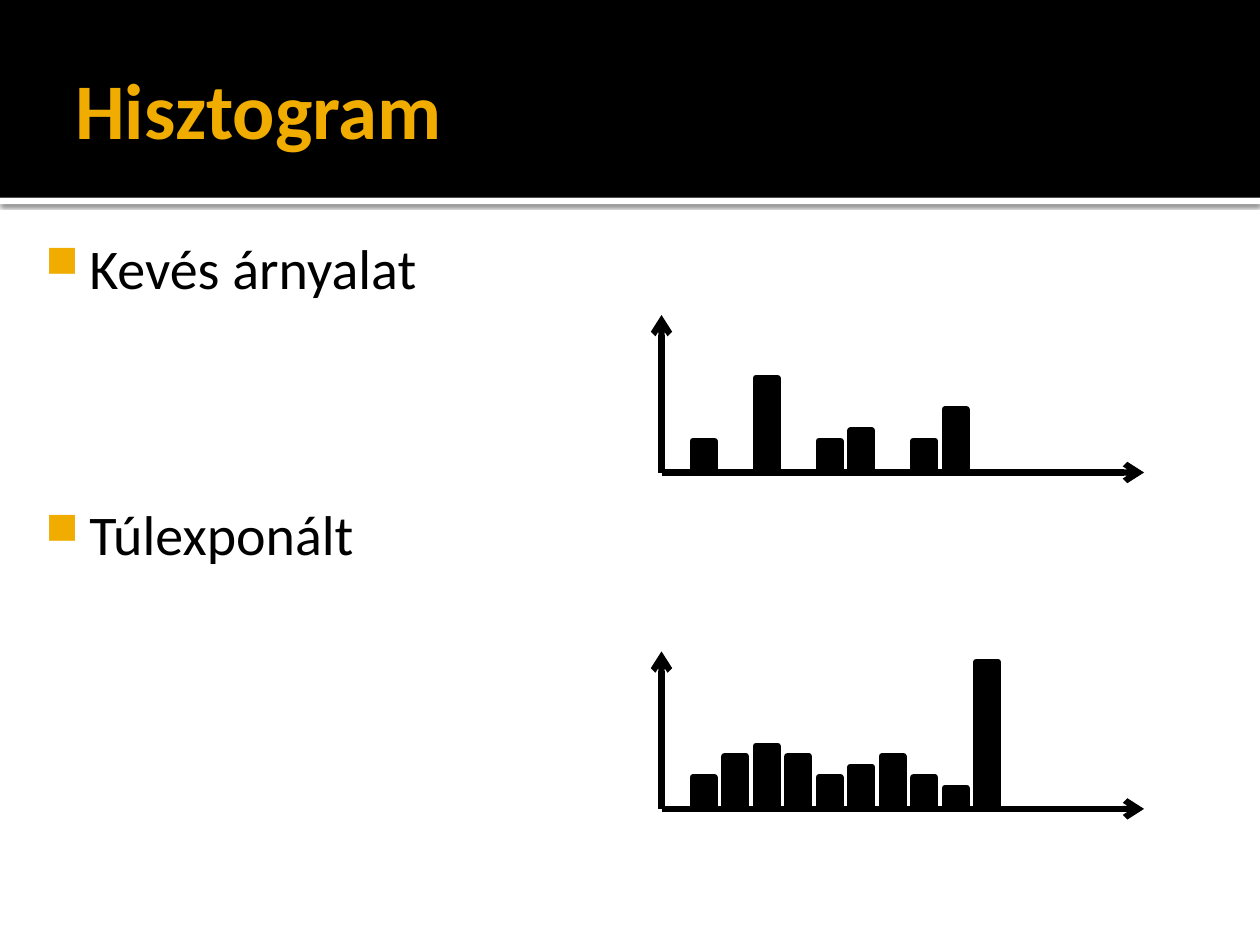
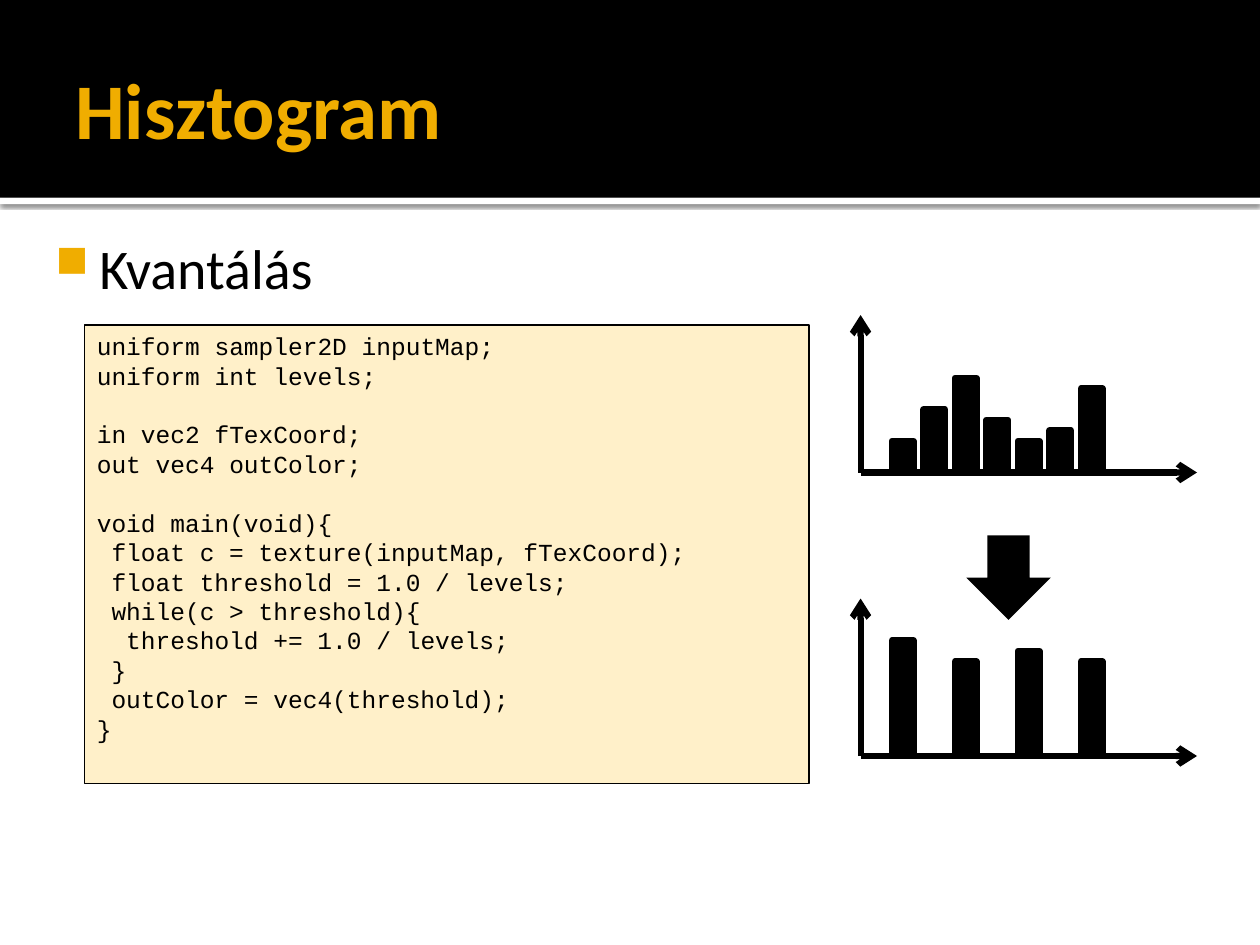
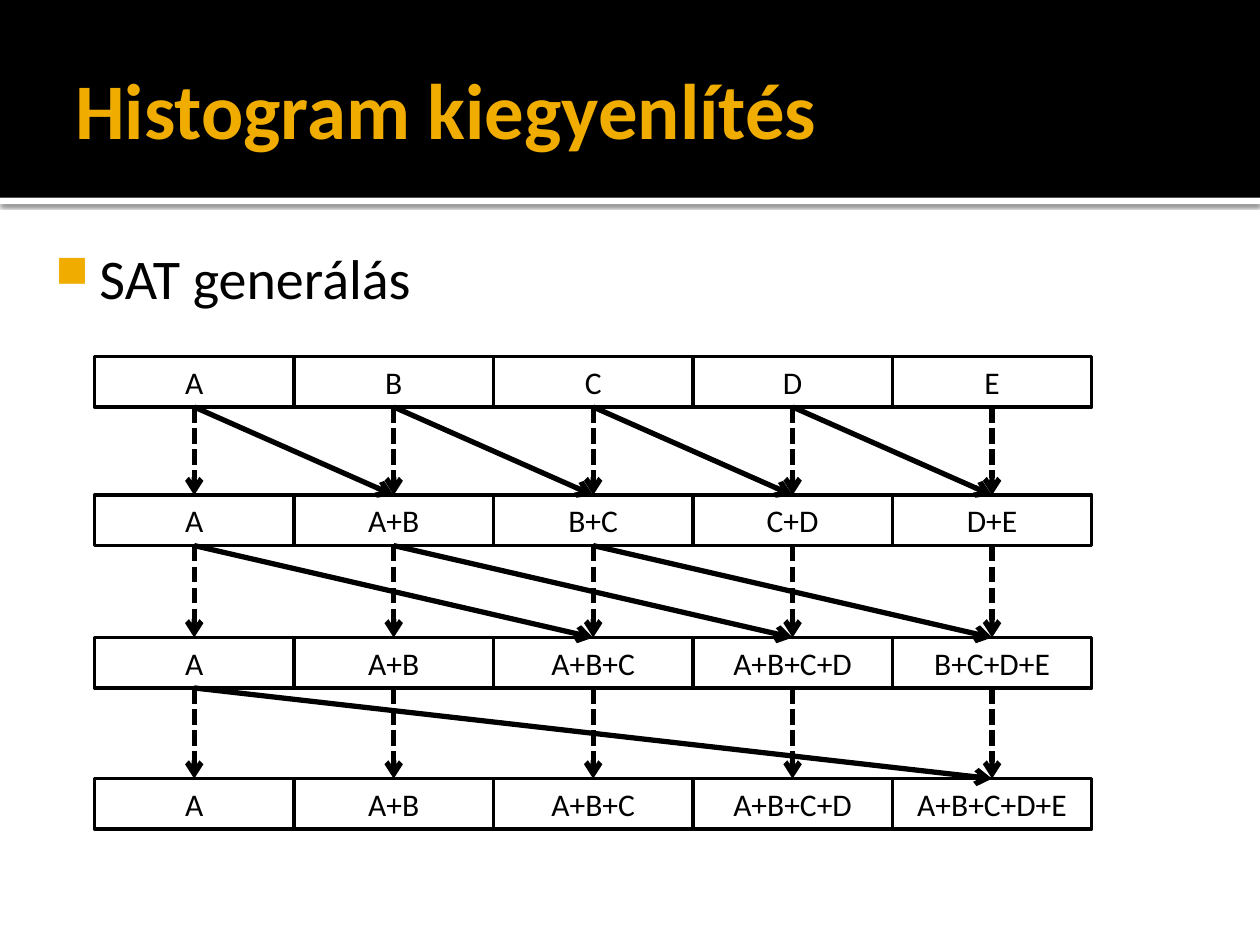
import pptx
import pptx.util
import pptx.dml.color
import pptx.enum.dml
import pptx.enum.shapes
import pptx.enum.text
import pptx.oxml
import pptx.oxml.ns

Inches, Pt = pptx.util.Inches, pptx.util.Pt
SHAPE = pptx.enum.shapes.MSO_SHAPE
ANCHOR = pptx.enum.text.MSO_ANCHOR
CENTER = pptx.enum.text.PP_ALIGN.CENTER

BLACK, WHITE, GOLD, CREAM = "000000", "FFFFFF", "F0AD00", "FFF0C9"
FONT, CODE_FONT = "Calibri", "Courier New"
WIDTH, HEIGHT, BAND_HEIGHT = 10, 7.5, 1.57
TOP, BOTTOM = 0, 2  # connection sites of a rectangle

# Bar heights in twelfths of an inch, one per slot; 0 leaves the slot empty
FEW_SHADES = [3, 0, 9, 0, 3, 4, 0, 3, 6]
OVEREXPOSED = [3, 5, 6, 5, 3, 4, 5, 3, 2, 14]
BEFORE_QUANTIZING = [3, 6, 9, 5, 3, 4, 8]
AFTER_QUANTIZING = [11, 0, 9, 0, 10, 0, 9]
BAR_UNIT, SLOT, BAR_WIDTH, AXIS_HEIGHT = 1 / 12, 0.25, 0.17, 1.25

# Blocks of (indent level, line)
SHADER = [
    [(0, "uniform sampler2D inputMap;"),
     (0, "uniform int levels;")],
    [(0, "in vec2 fTexCoord;"),
     (0, "out vec4 outColor;")],
    [(0, "void main(void){"),
     (1, "float c = texture(inputMap, fTexCoord);"),
     (1, "float threshold = 1.0 / levels;"),
     (1, "while(c > threshold){"),
     (2, "threshold += 1.0 / levels;"),
     (1, "}"),
     (1, "outColor = vec4(threshold);"),
     (0, "}")],
]
CODE_SIZE, CODE_LEADING = 14, 16.8

LETTERS = "ABCDE"
SUM_ROW_TOPS = [2.83, 3.93, 5.06, 6.18]
CELL_LEFT, CELL_WIDTH, CELL_HEIGHT = 0.75, 1.583, 0.4


def color(value):
    return pptx.dml.color.RGBColor.from_string(value)


def drawing_xml(markup):
    """Parse one element of the a: namespace."""
    head, mark, rest = markup.partition(" " if " " in markup else "/")
    return pptx.oxml.parse_xml(f"{head} {pptx.oxml.ns.nsdecls('a')}{mark}{rest}")


def add_box(page, left, top, width, height, kind=SHAPE.RECTANGLE,
            fill=None, line=None, weight=1):
    box = page.shapes.add_shape(kind, Inches(left), Inches(top),
                                Inches(width), Inches(height))
    box.shadow.inherit = False
    if fill:
        box.fill.solid()
        box.fill.fore_color.rgb = color(fill)
    else:
        box.fill.background()
    if line:
        box.line.color.rgb = color(line)
        box.line.width = Pt(weight)
    else:
        box.line.fill.background()
    return box


def set_frame(box, insets, anchor):
    frame = box.text_frame
    frame.word_wrap = True
    frame.vertical_anchor = anchor
    (frame.margin_left, frame.margin_top,
     frame.margin_right, frame.margin_bottom) = map(Inches, insets)
    return frame


def write(frame, text, size=18, font=FONT, ink=BLACK, bold=False, align=None,
          before=0, leading=None, indent=None, bullet=False):
    """Write one paragraph, using the empty first one if there is one."""
    para = frame.paragraphs[0]
    if para.runs:
        para = frame.add_paragraph()
    para.alignment = align or pptx.enum.text.PP_ALIGN.LEFT
    para.space_before = Pt(before)
    if leading:
        para.line_spacing = Pt(leading)
    properties = para._p.get_or_add_pPr()
    if indent:
        properties.set("marL", str(int(indent)))
    if bullet:
        properties.set("marL", str(Inches(0.48)))
        properties.set("indent", str(-Inches(0.35)))
        bullet_color = drawing_xml("<a:buClr />")
        bullet_color.append(drawing_xml(f'<a:srgbClr val="{GOLD}"/>'))
        properties.append(bullet_color)
        properties.append(drawing_xml('<a:buSzPct val="80000"/>'))
        properties.append(drawing_xml('<a:buChar char="■"/>'))
    span = para.add_run()
    span.text = text
    span.font.name, span.font.size, span.font.bold = font, Pt(size), bold
    span.font.color.rgb = color(ink)


def add_arrow(page, start=(0, 0), end=(0, 0), weight=3.0, dashed=False):
    arrow = page.shapes.add_connector(
        pptx.enum.shapes.MSO_CONNECTOR.STRAIGHT,
        *(Inches(value) for value in (*start, *end)))
    arrow.line.color.rgb = color(BLACK)
    arrow.line.width = Pt(weight)
    if dashed:
        arrow.line.dash_style = pptx.enum.dml.MSO_LINE.SQUARE_DOT
    arrow.line._get_or_add_ln().append(drawing_xml('<a:tailEnd type="arrow"/>'))
    arrow._element.spPr.append(drawing_xml("<a:effectLst />"))
    return arrow


def add_page(deck, title, bullets, left=0.25, top=1.75, gap=0):
    """Add a slide with its band, title and bullets, gap points apart."""
    page = deck.slides.add_slide(deck.slide_layouts[6])
    strip = add_box(page, 0, BAND_HEIGHT, WIDTH, 0.05, fill=WHITE)
    shadow = drawing_xml(f'<a:outerShdw blurRad="{Pt(2.5)}" dist="{Pt(0.8)}" '
                         'dir="5400000" rotWithShape="0"/>')
    shade = drawing_xml(f'<a:srgbClr val="{BLACK}"/>')
    shade.append(drawing_xml('<a:alpha val="60000"/>'))
    shadow.append(shade)
    strip._element.spPr.find(pptx.oxml.ns.qn("a:effectLst")).append(shadow)
    add_box(page, 0, 0, WIDTH, BAND_HEIGHT, fill=BLACK)

    title_box = page.shapes.add_textbox(Inches(0.5), Inches(0.17),
                                        Inches(9), Inches(1.37))
    frame = set_frame(title_box, (0.1, 0.05, 0.05, 0.05), ANCHOR.MIDDLE)
    write(frame, title, size=45, ink=GOLD, bold=True)

    body = page.shapes.add_textbox(Inches(left), Inches(top),
                                   Inches(9), Inches(5.06))
    frame = set_frame(body, (0.06, 0.1, 0.1, 0.05), ANCHOR.TOP)
    for index, text in enumerate(bullets):
        write(frame, text, size=32, bullet=True, before=gap if index else 0)
    return page


def add_histogram(page, left, base, length, heights):
    origin = (left, base)
    add_arrow(page, origin, (left + length, base), weight=3.5)
    add_arrow(page, origin, (left, base - AXIS_HEIGHT), weight=3.5)
    for slot, units in enumerate(heights, start=1):
        if units:
            height = units * BAR_UNIT
            add_box(page, left + slot * SLOT, base - height, BAR_WIDTH, height,
                    fill=BLACK, line=BLACK, weight=3.78)


def add_code(page, left, top, width, height):
    box = add_box(page, left, top, width, height,
                  fill=CREAM, line=BLACK, weight=0.75)
    frame = set_frame(box, (0.1, 0.05, 0.1, 0.05), ANCHOR.TOP)
    for block_index, block in enumerate(SHADER):
        for line_index, (level, text) in enumerate(block):
            opens_block = block_index > 0 and line_index == 0
            write(frame, text, size=CODE_SIZE, font=CODE_FONT,
                  leading=CODE_LEADING, before=CODE_LEADING * opens_block,
                  indent=Pt(0.6 * CODE_SIZE * level))


def add_prefix_sums(page):
    """Each row adds the value 1, 2, then 4 columns to the left."""
    count = len(LETTERS)
    rows = []
    for level, top in enumerate(SUM_ROW_TOPS):
        row = []
        for column in range(count):
            cell = add_box(page, CELL_LEFT + column * CELL_WIDTH, top,
                           CELL_WIDTH, CELL_HEIGHT, line=BLACK, weight=2)
            first = max(0, column + 1 - 2 ** level)
            frame = set_frame(cell, (0.05, 0.05, 0.05, 0.05), ANCHOR.MIDDLE)
            write(frame, "+".join(LETTERS[first:column + 1]), align=CENTER)
            row.append(cell)
        rows.append(row)

    for dashed in (True, False):
        for level, (upper, lower) in enumerate(zip(rows, rows[1:])):
            shift = 0 if dashed else 2 ** level
            for source, target in zip(upper, lower[shift:]):
                arrow = add_arrow(page, dashed=dashed)
                arrow.begin_connect(source, BOTTOM)
                arrow.end_connect(target, TOP)


def main():
    deck = pptx.Presentation()
    deck.slide_width, deck.slide_height = Inches(WIDTH), Inches(HEIGHT)

    page = add_page(deck, "Hisztogram", ["Kevés árnyalat", "Túlexponált"],
                    left=0.17, gap=114)
    add_histogram(page, 5.25, 3.75, 3.83, FEW_SHADES)
    add_histogram(page, 5.25, 6.42, 3.83, OVEREXPOSED)

    page = add_page(deck, "Hisztogram", ["Kvantálás"])
    add_histogram(page, 6.83, 3.75, 2.67, BEFORE_QUANTIZING)
    add_histogram(page, 6.83, 6, 2.67, AFTER_QUANTIZING)
    add_box(page, 7.67, 4.25, 0.67, 0.67, kind=SHAPE.DOWN_ARROW, fill=BLACK)
    add_code(page, 0.67, 2.58, 5.75, 3.64)

    page = add_page(deck, "Histogram kiegyenlítés", ["SAT generálás"], top=1.83)
    add_prefix_sums(page)

    deck.save("out.pptx")


if __name__ == "__main__":
    main()
